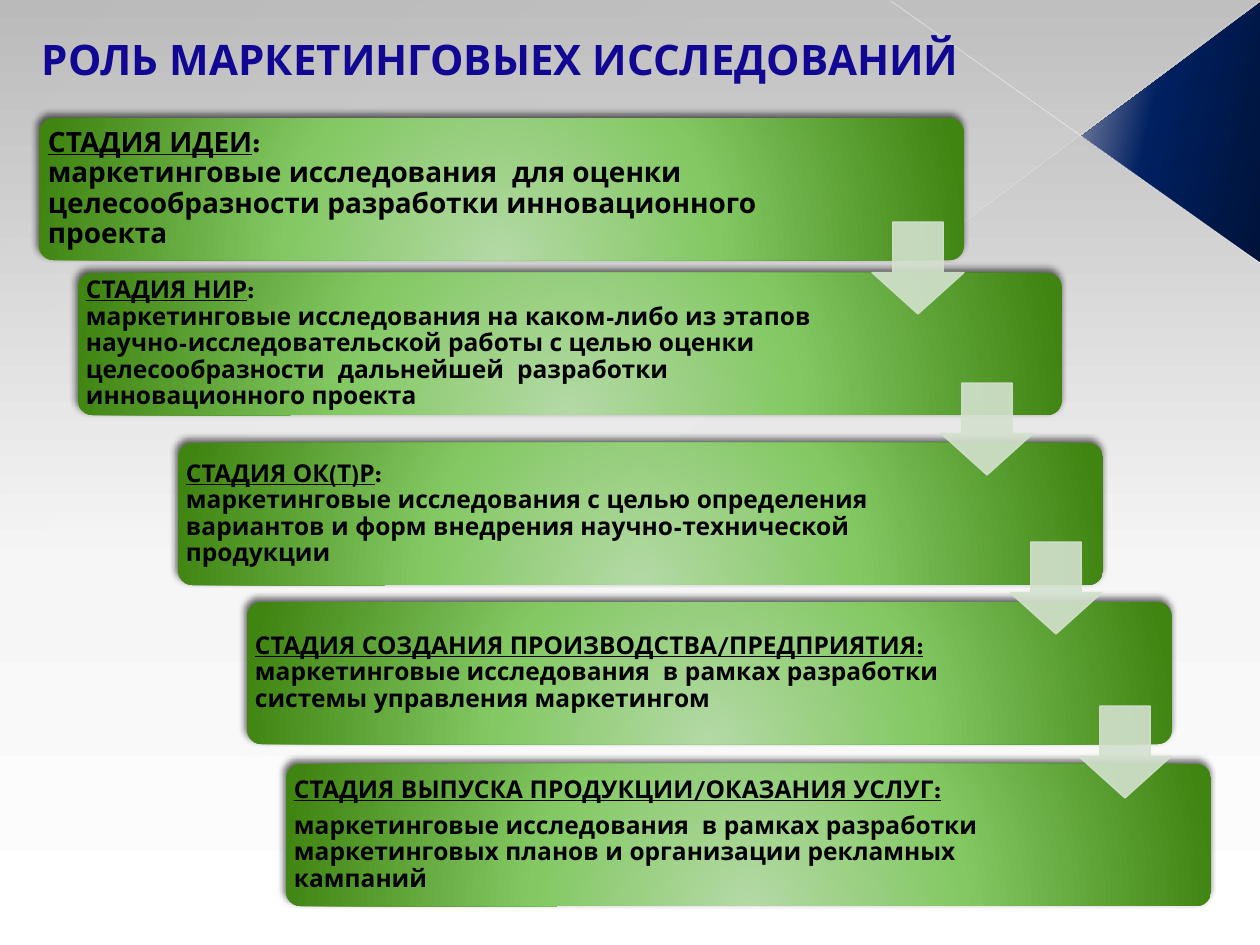
from dataclasses import dataclass

from lxml.etree import SubElement
from pptx import Presentation
from pptx.dml.color import RGBColor
from pptx.enum.shapes import MSO_CONNECTOR, MSO_SHAPE
from pptx.enum.text import MSO_ANCHOR, PP_ALIGN
from pptx.oxml.ns import qn
from pptx.util import Emu, Pt

SCALE = 914400 / 126


def px(length):
    """Turn pixels into EMU."""
    return Emu(round(length * SCALE))


@dataclass(frozen=True)
class Theme:
    """Colours, gradients and type sizes of the deck."""

    font: str = "League Spartan"
    title_size: int = 24
    lead_size: int = 16
    body_size: int = 14
    title: str = "110793"
    text: str = "000000"
    line: str = "FFFFFF"
    arrow: str = "D3E1CE"
    background: tuple = ((0, "B9B9B9", 100), (60, "F6F6F6", 100), (100, "FFFFFF", 100))
    veil: tuple = ((0, "FFFFFF", 10), (70, "FFFFFF", 8), (100, "FFFFFF", 1))
    corner: tuple = ((0, "001339", 100), (60, "002060", 100), (100, "8F92AE", 100))
    card: tuple = ((0, "B4D9A5", 100), (46, "83C863", 100), (100, "408412", 100))


class SlideBuilder:
    """Draws themed elements on the current slide."""

    def __init__(self, slide, theme):
        """Keep the slide and its theme."""
        self.slide = slide
        self.theme = theme

    def set_alpha(self, element, percent):
        """Make every colour inside an element translucent."""
        for color in element.iter(qn("a:srgbClr")):
            SubElement(color, qn("a:alpha"), val=str(percent * 1000))

    def set_gradient(self, fill, root, stops, angle=None):
        """Fill with a linear gradient, or a radial one when no angle is given."""
        fill.gradient()
        gradient = next(root.iter(qn("a:gradFill")))
        for child in list(gradient):
            gradient.remove(child)
        gradient.set("rotWithShape", "1")
        stop_list = SubElement(gradient, qn("a:gsLst"))
        for position, color, alpha in stops:
            stop = SubElement(stop_list, qn("a:gs"), pos=str(position * 1000))
            SubElement(stop, qn("a:srgbClr"), val=color)
            if alpha < 100:
                self.set_alpha(stop, alpha)
        if angle is None:
            radial = SubElement(gradient, qn("a:path"), path="circle")
            SubElement(radial, qn("a:fillToRect"), l="50000", t="155000", r="50000", b="-55000")
        else:
            SubElement(gradient, qn("a:lin"), ang=str(angle * 60000), scaled="0")

    def add_background(self):
        """Shade the slide from top to bottom."""
        self.set_gradient(self.slide.background.fill, self.slide.element, self.theme.background, 90)

    def add_shape(self, kind, box, adjustments=()):
        """Add a preset shape without shadow."""
        shape = self.slide.shapes.add_shape(kind, *map(px, box))
        shape.shadow.inherit = False
        for index, value in enumerate(adjustments):
            shape.adjustments[index] = value
        return shape

    def add_triangle(self, kind, box, stops, angle, rotation=0, adjustments=()):
        """Add a vertically flipped decorative triangle."""
        shape = self.add_shape(kind, box, adjustments)
        shape.rotation = rotation
        shape.element.spPr.find(qn("a:xfrm")).set("flipV", "1")
        self.set_gradient(shape.fill, shape.element, stops, angle)
        shape.line.fill.background()

    def add_line(self, start, end, width, alpha):
        """Add a thin translucent line."""
        line = self.slide.shapes.add_connector(MSO_CONNECTOR.STRAIGHT, *map(px, start + end))
        line.line.color.rgb = RGBColor.from_string(self.theme.line)
        line.line.width = Pt(width)
        properties = line._element.spPr
        self.set_alpha(properties, alpha)
        SubElement(properties, qn("a:effectLst"))

    def format_paragraph(self, paragraph, size, color):
        """Apply the shared bold type."""
        paragraph.alignment = PP_ALIGN.LEFT
        font = paragraph.font
        font.name, font.size, font.bold = self.theme.font, Pt(size), True
        font.color.rgb = RGBColor.from_string(color)

    def add_title(self, text, box):
        """Fill and place the title above the decoration."""
        title = self.slide.shapes.title
        self.slide.shapes._spTree.append(title.element)
        title.left, title.top, title.width, title.height = map(px, box)
        title.text_frame.text = text
        title.text_frame.vertical_anchor = MSO_ANCHOR.MIDDLE
        self.format_paragraph(title.text_frame.paragraphs[0], self.theme.title_size, self.theme.title)

    def add_card(self, box):
        """Add a rounded green card with a shadow."""
        card = self.add_shape(MSO_SHAPE.ROUNDED_RECTANGLE, box, (0.1,))
        self.set_gradient(card.fill, card.element, self.theme.card)
        card.line.fill.background()
        effects = card.element.spPr.find(qn("a:effectLst"))
        shadow = SubElement(effects, qn("a:outerShdw"), blurRad=str(Pt(4)), dist=str(Pt(3)),
                            dir=str(245 * 60000), rotWithShape="0")
        SubElement(shadow, qn("a:srgbClr"), val=self.theme.text)
        self.set_alpha(shadow, 60)

    def add_stage_text(self, box, heading, colon, body, size, inset, gap):
        """Add an underlined stage heading with its description."""
        frame = self.slide.shapes.add_textbox(*map(px, box)).text_frame
        frame.word_wrap = True
        frame.vertical_anchor = MSO_ANCHOR.MIDDLE
        frame.margin_left = frame.margin_right = px(inset)
        frame.margin_top = frame.margin_bottom = px(inset)
        first, second = frame.paragraphs[0], frame.add_paragraph()
        first.add_run().text = heading
        first.runs[0].font.underline = True
        if colon:
            first.add_run().text = colon
        second.add_run().text = body
        for paragraph in (first, second):
            self.format_paragraph(paragraph, size, self.theme.text)
            paragraph.line_spacing = 0.9
        first.space_after = Pt(gap)

    def add_arrow(self, box):
        """Add a translucent arrow pointing down."""
        arrow = self.add_shape(MSO_SHAPE.DOWN_ARROW, box, (0.55, 0.45))
        color = RGBColor.from_string(self.theme.arrow)
        arrow.fill.solid()
        arrow.fill.fore_color.rgb = color
        arrow.line.color.rgb = color
        arrow.line.width = Pt(0.75)
        self.set_alpha(arrow.element.spPr, 90)


def main():
    """Build the slide of research stages."""
    presentation = Presentation()
    presentation.slide_width, presentation.slide_height = px(1260), px(945)
    theme = Theme()
    builder = SlideBuilder(presentation.slides.add_slide(presentation.slide_layouts[5]), theme)

    builder.add_background()
    builder.add_triangle(MSO_SHAPE.RIGHT_TRIANGLE, (1, 1, 1258, 943), theme.veil, 133)
    builder.add_triangle(MSO_SHAPE.ISOSCELES_TRIANGLE, (1041, 43, 261, 179), theme.corner, 258, 90, (0.513,))
    builder.add_line((1260, 263), (891, 1), 0.47, 45)
    builder.add_line((0, 944), (1259, 1), 0.39, 35)
    builder.add_title("РОЛЬ МАРКЕТИНГОВЫЕХ ИССЛЕДОВАНИЙ", (29, 0, 998, 118))

    lead, body = (theme.lead_size, 9, 0), (theme.body_size, 8, 0)
    stages = (
        (39, 118, 925, 764, "СТАДИЯ ИДЕИ", ":",
         "маркетинговые исследования  для оценки целесообразности разработки инновационного проекта", lead),
        (78, 273, 984, 813, "СТАДИЯ НИР", ":",
         "маркетинговые исследования на каком-либо из этапов научно-исследовательской работы "
         "с целью оценки целесообразности  дальнейшей  разработки инновационного проекта", body),
        (178, 443, 925, 764, "СТАДИЯ ОК(Т)Р", ":",
         "маркетинговые исследования с целью определения вариантов и форм внедрения "
         "научно-технической продукции", body),
        (247, 602, 925, 764, "СТАДИЯ СОЗДАНИЯ ПРОИЗВОДСТВА/ПРЕДПРИЯТИЯ:", "",
         "маркетинговые исследования  в рамках разработки системы управления маркетингом", body),
        (286, 764, 925, 764, "СТАДИЯ ВЫПУСКА ПРОДУКЦИИ/ОКАЗАНИЯ УСЛУГ:", "",
         "маркетинговые исследования  в рамках разработки маркетинговых планов "
         "и организации рекламных кампаний", (theme.body_size, 8, 5)),
    )
    for left, top, width, text_width, heading, colon, description, style in stages:
        builder.add_card((left, top, width, 142))
        builder.add_stage_text((left, top, text_width, 142), heading, colon, description, *style)
    for index, top in enumerate((222, 383, 542, 706)):
        builder.add_arrow((872 + 69 * index, top, 92, 92))

    presentation.save("out.pptx")


if __name__ == "__main__":
    main()
